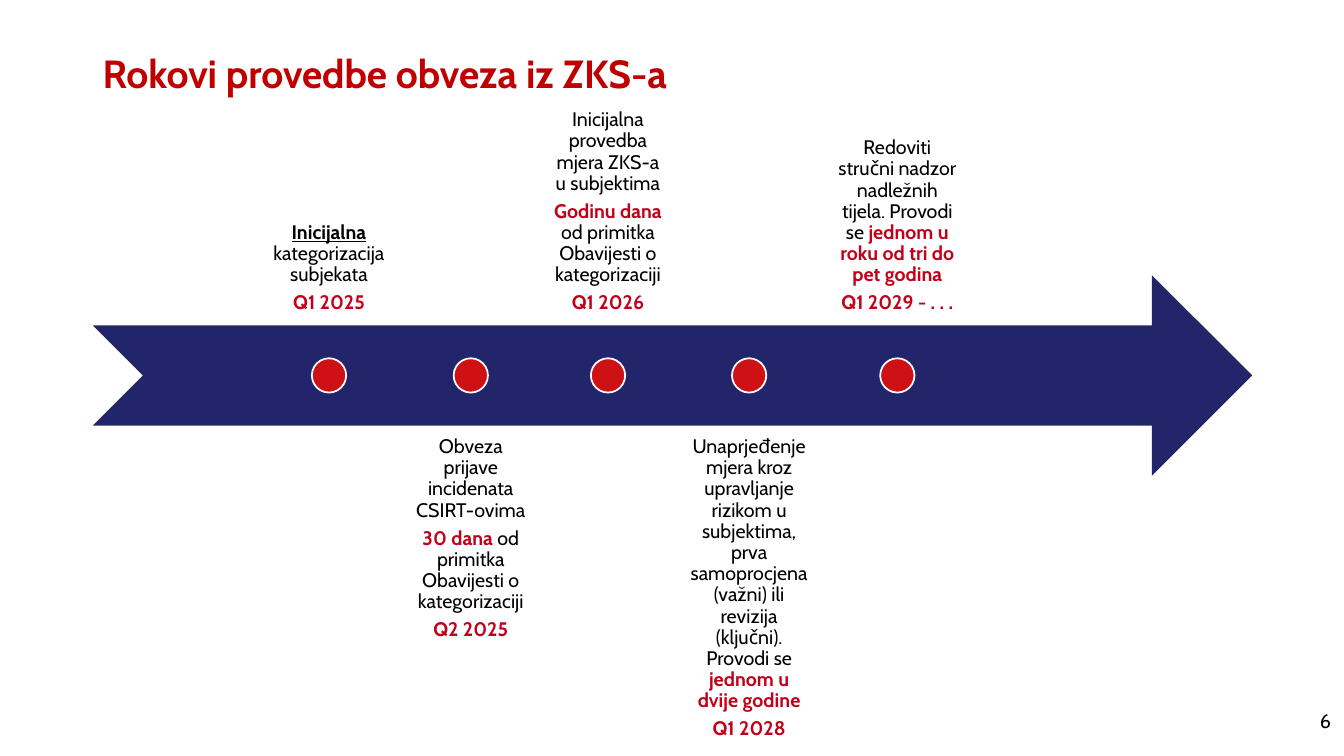
"""Build a slide with a timeline arrow of implementation deadlines."""
from dataclasses import dataclass

from pptx import Presentation
from pptx.dml.color import RGBColor
from pptx.enum.shapes import MSO_SHAPE
from pptx.enum.text import MSO_ANCHOR, PP_ALIGN
from pptx.util import Inches, Pt

ARROW, DOT = MSO_SHAPE.NOTCHED_RIGHT_ARROW, MSO_SHAPE.OVAL
TOP, MIDDLE, BOTTOM = MSO_ANCHOR.TOP, MSO_ANCHOR.MIDDLE, MSO_ANCHOR.BOTTOM
LEFT, CENTER, RIGHT = PP_ALIGN.LEFT, PP_ALIGN.CENTER, PP_ALIGN.RIGHT

BLACK = RGBColor(0x00, 0x00, 0x00)
WHITE = RGBColor(0xFF, 0xFF, 0xFF)
NAVY = RGBColor(0x23, 0x25, 0x6B)
DOT_RED = RGBColor(0xCD, 0x11, 0x14)
DATE_RED = RGBColor(0xC3, 0x00, 0x19)
TITLE_RED = RGBColor(0xC0, 0x00, 0x00)

FONT = "Cabin"
SLIDE_WIDTH, SLIDE_HEIGHT = Inches(13.33), Inches(7.5)

# Shares of the slide, in percent.
MARGIN, CONTENT_WIDTH = 6.9, 86.27
ARROW_TOP, ARROW_HEIGHT = 36.4, 26.53
BODY_TOP = ARROW_TOP + ARROW_HEIGHT / 4
BODY_BOTTOM = ARROW_TOP + ARROW_HEIGHT * 3 / 4
DOT_SIZE = Inches(0.34)


@dataclass(frozen=True)
class Span:
    text: str
    color: RGBColor = BLACK
    bold: bool = False
    underline: bool = False


@dataclass(frozen=True)
class Milestone:
    center: float
    width: float
    above: bool
    paragraphs: list[list[Span]]


def red(text: str) -> Span:
    return Span(text, DATE_RED, bold=True)


MILESTONES = [
    Milestone(24.48, 10.73, True, [
        [Span("Inicijalna", bold=True, underline=True), Span(" kategorizacija subjekata")],
        [red("Q1 2025")]]),
    Milestone(35.03, 10.2, False, [
        [Span("Obveza prijave incidenata CSIRT-ovima")],
        [red("30 dana "), Span("od primitka Obavijesti o kategorizaciji")],
        [red("Q2 2025")]]),
    Milestone(45.24, 9.9, True, [
        [Span("Inicijalna provedba mjera ZKS-a u subjektima")],
        [red("Godinu dana "), Span("od primitka Obavijesti o kategorizaciji")],
        [red("Q1 2026")]]),
    Milestone(55.74, 10.73, False, [
        [Span("Unaprjeđenje mjera kroz upravljanje rizikom u subjektima, prva "
              "samoprocjena (važni) ili revizija (ključni). Provodi se "),
         red("jednom u dvije godine")],
        [red("Q1 2028")]]),
    Milestone(66.77, 11.1, True, [
        [Span("Redoviti stručni nadzor nadležnih tijela. Provodi se "),
         red("jednom u roku od tri do pet godina")],
        [red("Q1 2029 - . . .")]]),
]


def across(share: float) -> int:
    return round(SLIDE_WIDTH * share / 100)


def down(share: float) -> int:
    return round(SLIDE_HEIGHT * share / 100)


def add_text(page, paragraphs: list[list[Span]], left: float, top: float,
             width: float, height: float, *, size: float = 14,
             align=LEFT, anchor=MIDDLE, line_spacing: float = 1.0,
             space_after: float = 0, inset: float | None = None) -> None:
    box = page.shapes.add_textbox(across(left), down(top), across(width), down(height))
    frame = box.text_frame
    frame.word_wrap = True
    frame.vertical_anchor = anchor
    if inset is not None:
        frame.margin_left = frame.margin_right = Inches(inset)
        frame.margin_top = frame.margin_bottom = Inches(inset)
    for index, spans in enumerate(paragraphs):
        para = frame.add_paragraph() if index else frame.paragraphs[0]
        para.alignment = align
        para.line_spacing = line_spacing
        para.space_after = Pt(space_after)
        for span in spans:
            run = para.add_run()
            run.text = span.text
            run.font.name = FONT
            run.font.size = Pt(size)
            run.font.bold = span.bold
            run.font.underline = span.underline
            run.font.color.rgb = span.color


def add_filled(page, kind, left: int, top: int, width: int, height: int,
               fill: RGBColor, outline: RGBColor | None = None) -> None:
    shape = page.shapes.add_shape(kind, left, top, width, height)
    shape.shadow.inherit = False
    shape.fill.solid()
    shape.fill.fore_color.rgb = fill
    if outline is None:
        shape.line.fill.background()
    else:
        shape.line.color.rgb = outline
        shape.line.width = Pt(1.25)


def add_milestone(page, milestone: Milestone) -> None:
    top = BODY_TOP - ARROW_HEIGHT if milestone.above else BODY_BOTTOM
    add_text(page, milestone.paragraphs, milestone.center - milestone.width / 2, top,
             milestone.width, ARROW_HEIGHT, align=CENTER,
             anchor=BOTTOM if milestone.above else TOP,
             line_spacing=0.9, space_after=4.9, inset=0.11)
    middle = down(ARROW_TOP + ARROW_HEIGHT / 2)
    add_filled(page, DOT, across(milestone.center) - DOT_SIZE // 2,
               middle - DOT_SIZE // 2, DOT_SIZE, DOT_SIZE, DOT_RED, WHITE)


def main() -> None:
    deck = Presentation()
    deck.slide_width, deck.slide_height = SLIDE_WIDTH, SLIDE_HEIGHT
    page = deck.slides.add_slide(deck.slide_layouts[6])
    add_filled(page, ARROW, across(MARGIN), down(ARROW_TOP),
               across(CONTENT_WIDTH), down(ARROW_HEIGHT), NAVY)
    for milestone in MILESTONES:
        add_milestone(page, milestone)
    add_text(page, [[Span("Rokovi provedbe obveza iz ZKS-a", TITLE_RED, bold=True)]],
             MARGIN, 5.33, CONTENT_WIDTH, 9.47, size=28, line_spacing=0.9)
    add_text(page, [[Span("6")]], 91.82, 92.67, 7.95, 5.33, align=RIGHT)
    deck.save("out.pptx")


if __name__ == "__main__":
    main()
